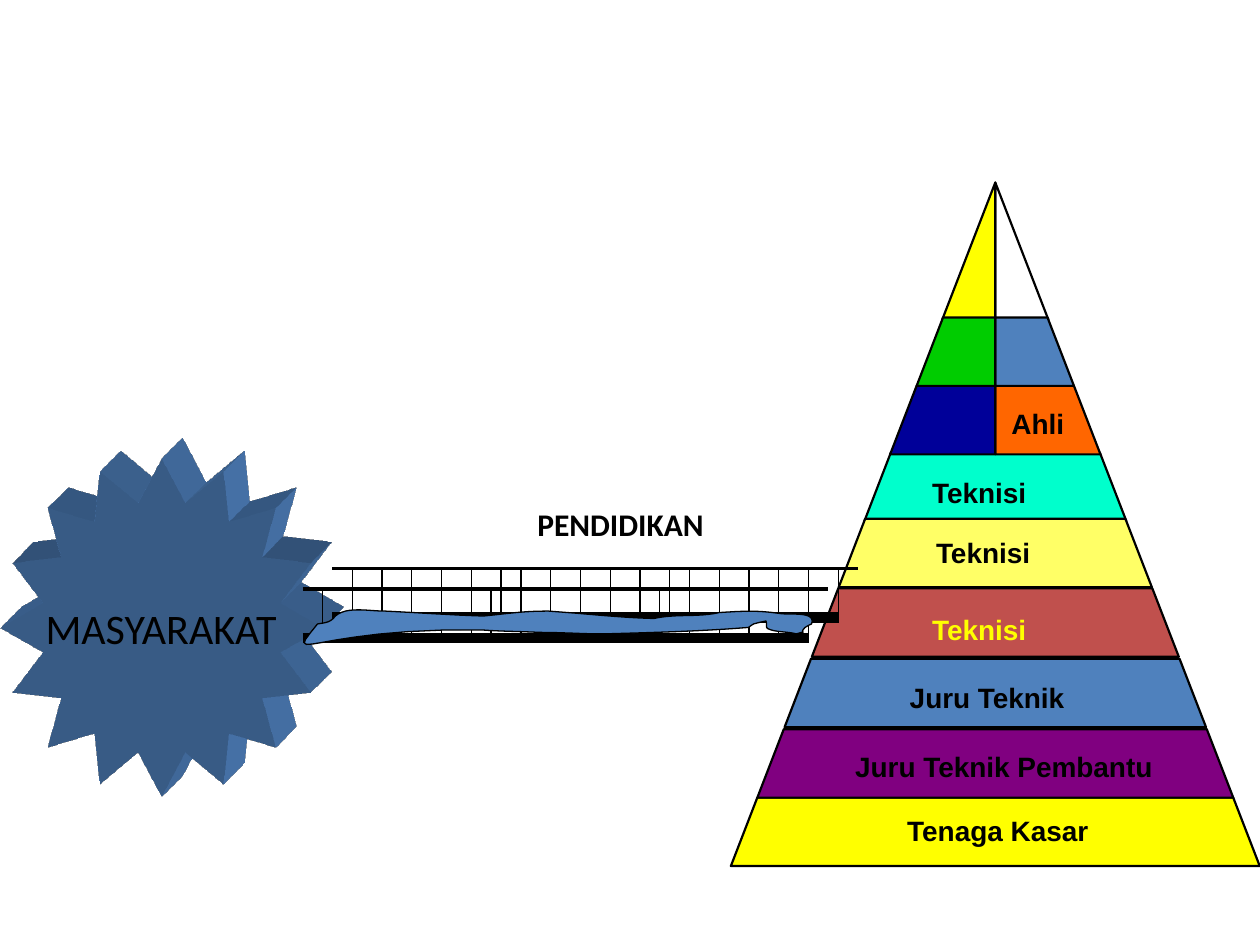
from dataclasses import dataclass
from itertools import product

from lxml.etree import fromstring
from pptx import Presentation
from pptx.dml.color import RGBColor
from pptx.enum.shapes import MSO_CONNECTOR, MSO_SHAPE
from pptx.enum.text import MSO_ANCHOR, PP_ALIGN
from pptx.oxml import parse_xml
from pptx.oxml.ns import nsdecls, qn
from pptx.util import Cm, Pt


@dataclass(frozen=True)
class Theme:
    black: str = "000000"
    white: str = "FFFFFF"
    blue: str = "4F81BD"
    red: str = "C0504D"
    yellow: str = "FFFF00"
    pale_yellow: str = "FFFF66"
    aqua: str = "00FFCC"
    purple: str = "800080"
    orange: str = "FF6600"
    navy: str = "000099"
    green: str = "00CC00"
    body_font: str = "Calibri"
    label_font: str = "Arial"
    society_size: float = 24
    bridge_size: float = 18
    label_size: float = 16
    thin: float = 0.75
    outline: float = 1.25
    rail: float = 2.25
    deck: float = 6


T = Theme()

TIER_H = 1.38
TIP_H = 2.77
# top, fill, label, label colour, label left, label drop, label width
TIERS = [
    (5.44, T.aqua, "Teknisi", T.black, 4.06, 0.46, 1.96),
    (12.4, T.yellow, "Tenaga Kasar", T.black, 3.56, 0.33, 3.68),
    (11.02, T.purple, "Juru Teknik Pembantu", T.black, 2.51, 0.41, 6.05),
    (9.6, T.blue, "Juru Teknik", T.black, 3.61, 0.43, 3.18),
    (8.18, T.red, "Teknisi", T.yellow, 4.06, 0.48, 1.96),
    (6.78, T.pale_yellow, "Teknisi", T.black, 4.14, 0.33, 1.96),
]
# top, height, left fill, right fill
SPLIT_TIERS = [
    (4.1, TIER_H, T.navy, T.orange),
    (0, TIP_H, T.yellow, T.white),
    (2.72, TIER_H, T.green, T.blue),
]

RIVER_START = (1.07, 0.2)
# Bezier segments: two control points and an end point each
RIVER_CURVES = [
    ((0.97, 0.33), (0.89, 0.33), (0.71, 0.36)),
    ((0, 1.24), (0.58, 0.43), (4.01, 0.48)),
    ((4.42, 0.51), (4.8, 0.51), (5.21, 0.53)),
    ((5.64, 0.53), (6.05, 0.56), (6.48, 0.56)),
    ((7.52, 0.53), (8.38, 0.51), (9.4, 0.43)),
    ((9.42, 0.41), (9.47, 0.38), (9.5, 0.36)),
    ((9.6, 0.33), (9.75, 0.3), (9.75, 0.3)),
    ((9.78, 0.36), (9.73, 0.43), (9.8, 0.46)),
    ((9.96, 0.53), (10.19, 0.51), (10.36, 0.56)),
    ((10.64, 0.48), (10.39, 0.58), (10.54, 0.43)),
    ((10.57, 0.41), (10.62, 0.38), (10.67, 0.36)),
    ((10.77, 0.1), (10.26, 0.18), (10.03, 0.15)),
    ((9.6, 0.08), (9.27, 0.1), (8.81, 0.13)),
    ((8.38, 0.23), (7.92, 0.15), (7.49, 0.25)),
    ((6.78, 0.23), (6.1, 0.15), (5.36, 0.1)),
    ((4.85, 0.1), (4.55, 0.15), (4.06, 0.2)),
    ((3.38, 0.18), (2.72, 0.13), (2.06, 0.1)),
    ((1.73, 0.1), (1.3, 0), (1.07, 0.2)),
]


def write(tf, text, size, font=T.body_font, color=T.black, bold=False,
          align=PP_ALIGN.CENTER, wrap=True, inset=None):
    tf.word_wrap = wrap
    if inset is not None:
        tf.margin_left = tf.margin_right = Cm(inset)
        tf.margin_top = tf.margin_bottom = Cm(inset)
    p = tf.paragraphs[0]
    p.alignment = align
    r = p.add_run()
    r.text = text
    r.font.size, r.font.name, r.font.bold = Pt(size), font, bold
    r.font.color.rgb = RGBColor.from_string(color)


def add_line(shapes, x1, y1, x2, y2, width):
    ln = shapes.add_connector(MSO_CONNECTOR.STRAIGHT, Cm(x1), Cm(y1), Cm(x2), Cm(y2))
    ln.line.color.rgb = RGBColor.from_string(T.black)
    ln.line.width = Pt(width)
    ln._element.spPr.append(parse_xml(f"<a:effectLst {nsdecls('a')}/>"))


def add_outline(shapes, points, fill, width):
    """Draw a closed, filled outline through points in centimetres."""
    pts = [(Cm(x), Cm(y)) for x, y in points]
    builder = shapes.build_freeform(*pts[0])
    builder.add_line_segments(pts[1:], close=True)
    sp = builder.convert_to_shape()
    sp.shadow.inherit = False
    sp.fill.solid()
    sp.fill.fore_color.rgb = RGBColor.from_string(fill)
    sp.line.color.rgb = RGBColor.from_string(T.black)
    sp.line.width = Pt(width)


def add_society(shapes, x, y, w, h):
    sp = shapes.add_shape(MSO_SHAPE.STAR_16_POINT, Cm(x), Cm(y), Cm(w), Cm(h))
    sp.adjustments[0] = 0.375
    sp.shadow.inherit = False
    sp.fill.solid()
    sp.fill.fore_color.rgb = RGBColor.from_string(T.blue)
    sp.line.fill.background()
    for xml in (
        f'<a:scene3d {nsdecls("a")}><a:camera prst="legacyObliqueTopRight"/>'
        '<a:lightRig rig="legacyFlat3" dir="b"/></a:scene3d>',
        f'<a:sp3d {nsdecls("a")} extrusionH="430200" prstMaterial="legacyMatte">'
        f'<a:extrusionClr><a:srgbClr val="{T.blue}"/></a:extrusionClr></a:sp3d>',
    ):
        sp._element.spPr.append(parse_xml(xml))
    sp.text_frame.vertical_anchor = MSO_ANCHOR.MIDDLE
    write(sp.text_frame, "MASYARAKAT", T.society_size, wrap=False)


def add_bridge_side(shapes, x, y):
    height, panels, posts = 0.99, 3, 6
    add_line(shapes, x, y + height, x + 10.21, y + height, T.deck)
    add_line(shapes, x, y, x + 10.59, y, T.rail)
    for panel, post in product(range(panels), range(posts)):
        post_x = x + 0.4 + 3.4 * panel + 0.6 * post
        add_line(shapes, post_x, y, post_x, y + height, T.thin)


def add_river(shapes, x, y, steps=12):
    points = [RIVER_START]
    for c1, c2, end in RIVER_CURVES:
        start = points[-1]
        for t in (i / steps for i in range(1, steps + 1)):
            u = 1 - t
            points.append(tuple(
                u**3 * a + 3 * u * u * t * b + 3 * u * t * t * c + t**3 * d
                for a, b, c, d in zip(start, c1, c2, end)))
    add_outline(shapes, [(x + px, y + py) for px, py in points], T.blue, T.thin)


def add_bridge(shapes, x, y):
    group = shapes.add_group_shape().shapes
    add_bridge_side(group, x, y + 0.41)
    add_bridge_side(group, x + 0.6, y)
    add_river(group, x - 0.41, y + 0.76)


def add_pyramid(shapes, x, y, w, h):
    group = shapes.add_group_shape().shapes
    mid = x + w / 2

    def add_tier(top, height, fill, left=1, right=1):
        """Cut a slice; left and right say which halves it covers."""
        a, b = (w / 2 * d / h for d in (top, top + height))
        y1, y2 = y + top, y + top + height
        add_outline(group, [(mid - left * a, y1), (mid - left * b, y2),
                            (mid + right * b, y2), (mid + right * a, y1)],
                    fill, T.outline)

    def add_label(text, left, top, width, color=T.black):
        box = group.add_textbox(Cm(x + left), Cm(y + top), Cm(width), Cm(0.69))
        write(box.text_frame, text, T.label_size, font=T.label_font, color=color,
              bold=True, align=PP_ALIGN.LEFT, wrap=False, inset=0)

    for top, fill, text, color, left, drop, width in TIERS:
        add_tier(top, TIER_H, fill)
        add_label(text, left, top + drop, width, color)
    for top, height, left_fill, right_fill in SPLIT_TIERS:
        add_tier(top, height, right_fill, left=0)
        add_tier(top, height, left_fill, right=0)
    add_label("Ahli", 5.66, 4.51, 1.07)


def main():
    prs = Presentation()
    prs.slide_width, prs.slide_height = Cm(25.4), Cm(19.05)
    shapes = prs.slides.add_slide(prs.slide_layouts[6]).shapes
    add_society(shapes, 0, 9.25, 6.5, 6.81)
    caption = shapes.add_textbox(Cm(8.51), Cm(10.06), Cm(8), Cm(1.02))
    write(caption.text_frame, "PENDIDIKAN", T.bridge_size, bold=True)
    add_pyramid(shapes, 14.73, 3.68, 10.67, 13.79)
    add_bridge(shapes, 6.1, 11.46)
    prs.save("out.pptx")


if __name__ == "__main__":
    main()
